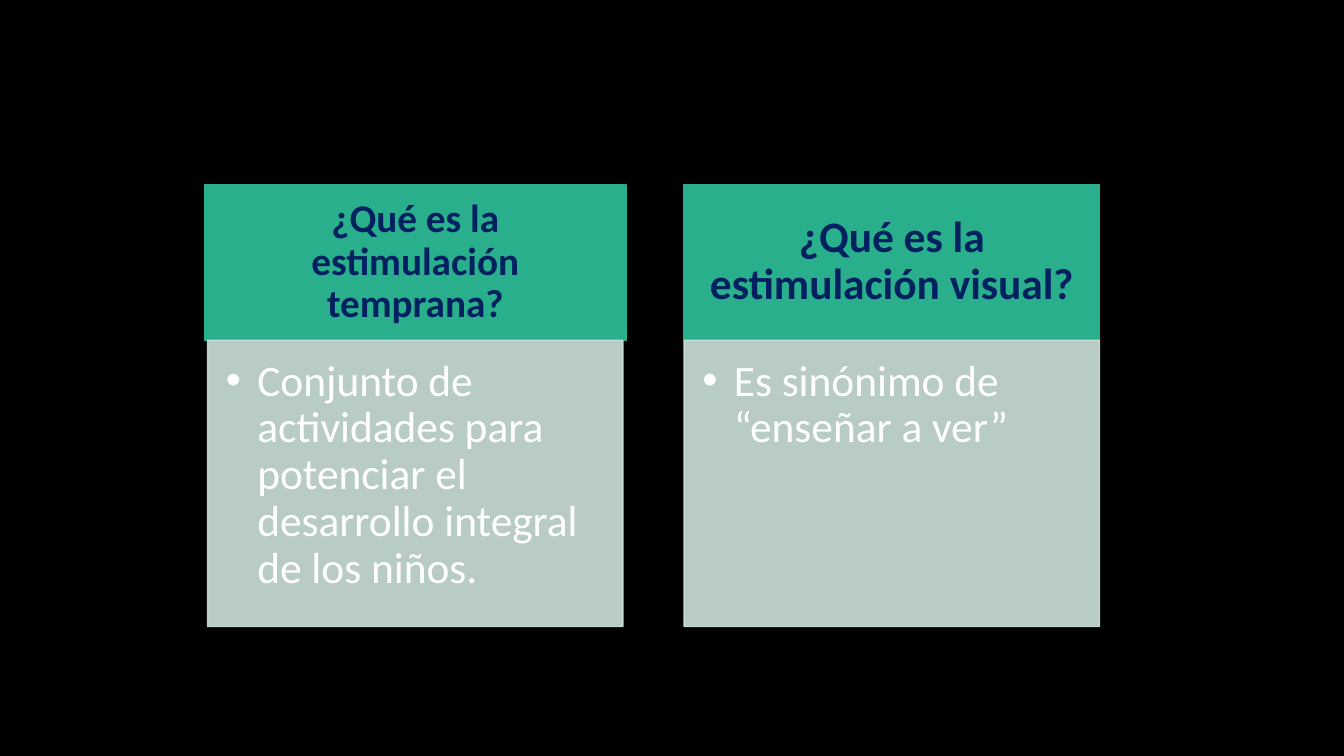
from dataclasses import dataclass

from lxml.etree import SubElement
from pptx import Presentation
from pptx.dml.color import RGBColor as RGB
from pptx.enum.shapes import MSO_SHAPE as SHAPE
from pptx.enum.text import MSO_ANCHOR as ANCHOR, PP_ALIGN as ALIGN
from pptx.oxml.ns import qn
from pptx.util import Pt


@dataclass(frozen=True)
class Theme:
    font: str = "Calibri"
    background: RGB = RGB(0x00, 0x00, 0x00)
    header: RGB = RGB(0x29, 0xAF, 0x8C)
    header_text: RGB = RGB(0x00, 0x20, 0x60)
    body: RGB = RGB(0xCD, 0xE3, 0xDA)
    body_text: RGB = RGB(0xFF, 0xFF, 0xFF)
    body_alpha: int = 90
    small: int = 28
    large: int = 31


class Deck:
    def __init__(self, prs, theme):
        self.theme = theme
        self.s = prs.slides.add_slide(prs.slide_layouts[6])
        fill = self.s.background.fill
        fill.solid()
        fill.fore_color.rgb = theme.background

    def box(self, at, color, text, size, text_color, insets, bold=False):
        sp = self.s.shapes.add_shape(SHAPE.RECTANGLE, *map(Pt, at))
        sp.shadow.inherit = False
        sp.fill.solid()
        sp.fill.fore_color.rgb = color
        sp.line.color.rgb = color
        sp.line.width = Pt(1)
        tf = sp.text_frame
        tf.word_wrap = True
        tf.margin_left, tf.margin_top, tf.margin_right, tf.margin_bottom = map(Pt, insets)
        tf.text = text
        p = tf.paragraphs[0]
        p.line_spacing = 0.9
        font = p.runs[0].font
        font.name = self.theme.font
        font.size = Pt(size)
        font.bold = bold
        font.color.rgb = text_color
        return sp

    def header(self, at, text, size, inset_x, inset_y):
        t = self.theme
        insets = (inset_x, inset_y, inset_x, inset_y)
        sp = self.box(at, t.header, text, size, t.header_text, insets, bold=True)
        sp.text_frame.vertical_anchor = ANCHOR.MIDDLE
        sp.text_frame.paragraphs[0].alignment = ALIGN.CENTER

    def body(self, at, text):
        t = self.theme
        sp = self.box(at, t.body, text, t.large, t.body_text, (13, 13, 17.3, 19.5))
        for clr in list(sp._element.spPr.iter(qn("a:srgbClr"))):
            SubElement(clr, qn("a:alpha"), val=str(t.body_alpha * 1000))
        sp.text_frame.vertical_anchor = ANCHOR.TOP
        p = sp.text_frame.paragraphs[0]
        p.alignment = ALIGN.LEFT
        pPr = p._p.get_or_add_pPr()
        pPr.set("marL", str(Pt(22.5)))
        pPr.set("indent", str(-Pt(22.5)))
        SubElement(pPr, qn("a:buFont"), typeface="Arial")
        SubElement(pPr, qn("a:buChar"), char="•")


def main():
    prs = Presentation()
    prs.slide_width, prs.slide_height = Pt(960), Pt(540)
    theme = Theme()
    deck = Deck(prs, theme)

    header_top, header_height = 131.8, 111.3
    body_top, body_height = header_top + header_height, 204.5
    body_width = 296.6
    columns = [
        (148.3, 2.2, "¿Qué es la estimulación temprana?", theme.small, 16, 9,
         "Conjunto de actividades para potenciar el desarrollo integral de los niños."),
        (488.7, 0, "¿Qué es la estimulación visual?", theme.large, 17, 10,
         "Es sinónimo de “enseñar a ver”"),
    ]
    for left, overhang, question, size, inset_x, inset_y, answer in columns:
        deck.header((left - overhang, header_top, body_width + 2 * overhang, header_height),
                    question, size, inset_x, inset_y)
        deck.body((left, body_top, body_width, body_height), answer)

    prs.save("out.pptx")


if __name__ == "__main__":
    main()
